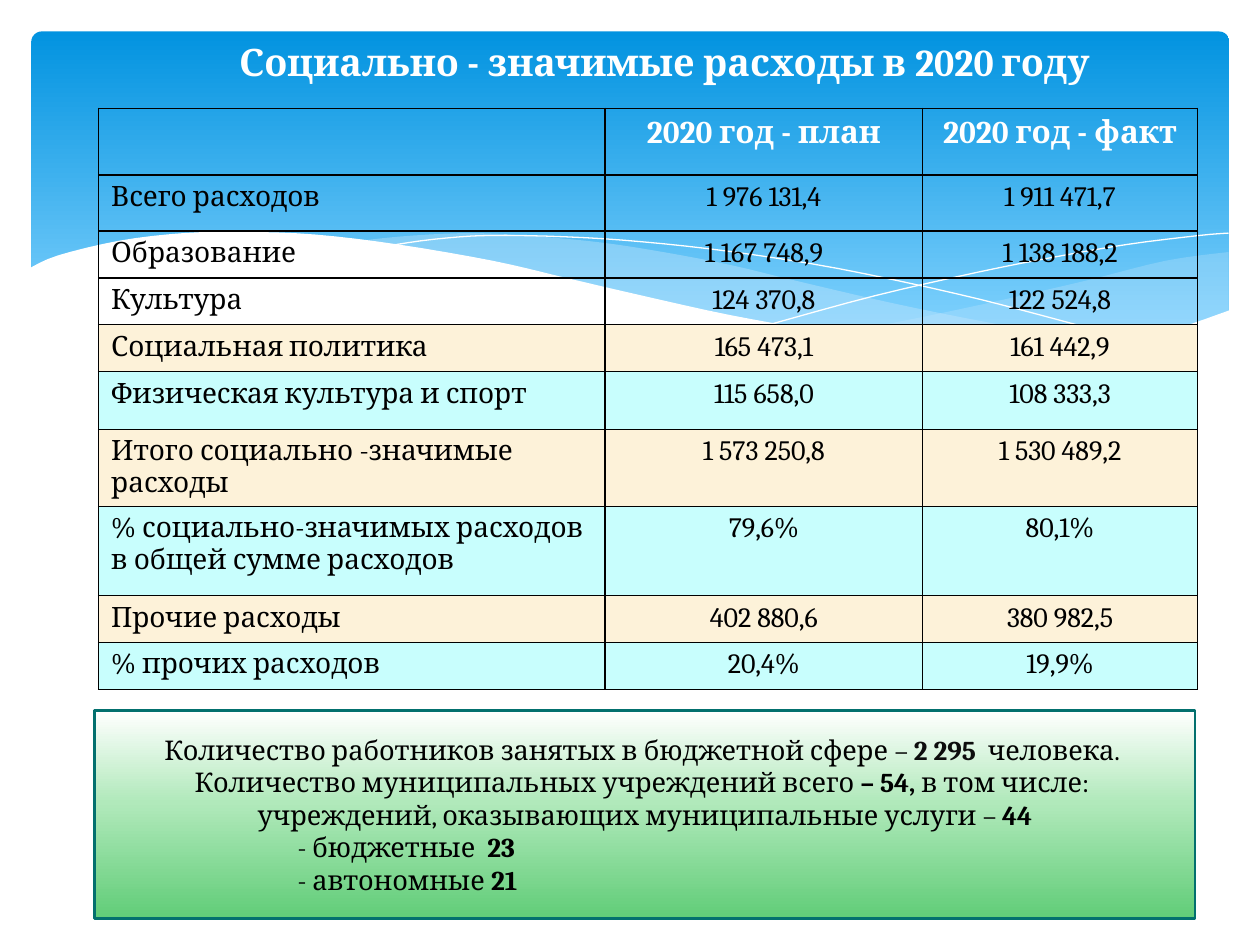
from copy import deepcopy
from pptx import Presentation
from pptx.dml.color import RGBColor
from pptx.enum.shapes import MSO_SHAPE
from pptx.enum.text import MSO_ANCHOR, MSO_AUTO_SIZE, PP_ALIGN
from pptx.oxml import parse_xml
from pptx.oxml.ns import nsdecls, qn
from pptx.util import Pt

FONT = "Cambria"
WHITE, BLACK, CREAM, AQUA = "FFFFFF", "000000", "FDF2D9", "C8FEFD"

# Knots of the wave curves, in points
BACK = [[(702, 144), (666, 149), (620, 160.5), (561, 174), (508, 185), (476, 191)],
        [(476, 191), (518, 195), (562, 199.4), (600, 199.7), (634, 197.3),
         (663, 191.5), (702, 178)]]
FRONT = [[(643, 196.5), (602, 190.8), (558, 183), (508, 172.8), (453, 160),
          (420, 152), (390, 146), (352, 139.7), (318, 136), (274, 133.2),
          (236, 134.6), (206, 137.5)],
         [(206, 137.5), (246, 143), (291, 152), (323, 160), (382, 173),
          (433, 183.6), (479, 191.5), (520, 197), (556, 199.4), (589, 200),
          (624, 198.7), (643, 196.5)]]
FALL = [(222.5, 140.4), (247.7, 136.8), (279, 134.6), (324, 135.4), (367, 138.2),
        (419, 144), (479, 153.5), (547, 168), (598, 181), (653, 196)]
RISE = [(441.4, 185), (500, 169), (559, 155.5), (602, 147), (644, 139.7),
        (685, 134.6), (702, 133.2)]
EDGE = [(16.6, 153.4), (33, 146), (68.4, 137.5), (105, 133.2), (139, 132.5),
        (180, 134), (227.5, 139.7), (281.5, 149), (321.8, 158.4), (362, 167.8),
        (417, 180), (466.6, 188.6), (522.7, 195.8), (571, 198.7), (602.6, 198.7),
        (638.6, 195), (669.6, 188.6), (703.4, 177)]

COLS = [289.5, 181.5, 157]
# Row height, fill, cells
ROWS = [
    (38, None, ["", "2020 год - план", "2020 год - факт"]),
    (32, None, ["Всего расходов", "1 976 131,4", "1 911 471,7"]),
    (26.8, None, ["Образование", "1 167 748,9", "1 138 188,2"]),
    (26.8, None, ["Культура", "124 370,8", "122 524,8"]),
    (26.8, CREAM, ["Социальная политика", "165 473,1", "161 442,9"]),
    (33, AQUA, ["Физическая культура и спорт", "115 658,0", "108 333,3"]),
    (44, CREAM, ["Итого социально -значимые расходы", "1 573 250,8", "1 530 489,2"]),
    (51, AQUA, ["% социально-значимых расходов в общей сумме расходов",
                "79,6%", "80,1%"]),
    (26.8, CREAM, ["Прочие расходы", "402 880,6", "380 982,5"]),
    (26.8, AQUA, ["% прочих расходов", "20,4%", "19,9%"]),
]
# Indent, then runs; every second run is bold
NOTES = [
    (0, ["Количество работников занятых в бюджетной сфере – ", "2 295  ", "человека. "]),
    (0, ["Количество муниципальных учреждений всего ", "– 54, ", "в том числе: "]),
    (0, ["учреждений, оказывающих муниципальные услуги – ", "44"]),
    (109, ["- бюджетные  ", "23"]),
    (109, ["- автономные ", "21"]),
]


def rgb(code):
    return RGBColor.from_string(code)


def add_run(para, text, size, color=BLACK, bold=False):
    run = para.add_run()
    run.text = text
    font = run.font
    font.name, font.size, font.bold = FONT, Pt(size), bold
    font.color.rgb = rgb(color)


def smooth(knots, steps=4):
    """Catmull-Rom points through the knots."""
    ext = [knots[0], *knots, knots[-1]]
    pts = [knots[0]]
    for a, b, c, d in zip(ext, ext[1:], ext[2:], ext[3:]):
        for n in range(1, steps + 1):
            t = n / steps
            pts.append(tuple(
                (2 * q + (r - p) * t + (2 * p - 5 * q + 4 * r - s) * t ** 2
                 + (3 * q - p - 3 * r + s) * t ** 3) / 2
                for p, q, r, s in zip(a, b, c, d)))
    return pts


def add_path(slide, pts, fill=None, alpha=None):
    """A closed filled area, or an open white hairline without fill."""
    spots = [(Pt(x), Pt(y)) for x, y in pts]
    pen = slide.shapes.build_freeform(*spots[0], scale=1.0)
    pen.add_line_segments(spots[1:], close=fill is not None)
    shape = pen.convert_to_shape()
    shape.shadow.inherit = False
    if fill is None:
        shape.fill.background()
        shape.line.width = Pt(0)
        shape.line.color.rgb = rgb(WHITE)
        return
    shape.line.fill.background()
    shape.fill.solid()
    shape.fill.fore_color.rgb = rgb(fill)
    if alpha:
        tone = shape.fill._xPr.find(".//" + qn("a:srgbClr"))
        tone.append(parse_xml(f'<a:alpha {nsdecls("a")} val="{alpha * 1000}"/>'))


def add_panel(slide, kind, box, stops):
    """A shape with a gradient running downwards."""
    shape = slide.shapes.add_shape(kind, *map(Pt, box))
    shape.shadow.inherit = False
    shape.fill.gradient()
    shape.fill.gradient_angle = 270
    group = shape._element.spPr.find(".//" + qn("a:gsLst"))
    for _ in stops[2:]:
        group.append(deepcopy(group[-1]))
    for stop, (pos, color) in zip(shape.fill.gradient_stops, stops):
        stop.position = pos
        stop.color.rgb = rgb(color)
    return shape


def add_waves(slide):
    for parts, alpha in ((BACK, 29), (FRONT, 40)):
        add_path(slide, smooth(parts[0]) + smooth(parts[1])[1:], "C6E7FC", alpha)
    for knots in (FALL, RISE):
        add_path(slide, smooth(knots))
    add_path(slide, smooth(EDGE) + [(703.4, 237), (16.6, 237)], WHITE)


def set_border(cell):
    props = cell._tc.get_or_add_tcPr()
    for n, side in enumerate(("lnL", "lnR", "lnT", "lnB")):
        props.insert(n, parse_xml(
            f'<a:{side} {nsdecls("a")} w="{Pt(1)}"><a:solidFill>'
            f'<a:srgbClr val="{BLACK}"/></a:solidFill></a:{side}>'))


def add_grid(slide):
    high = sum(row[0] for row in ROWS)
    table = slide.shapes.add_table(len(ROWS), len(COLS), Pt(56.3), Pt(62),
                                   Pt(sum(COLS)), Pt(high)).table
    table.first_row = table.horz_banding = False
    for col, wide in zip(table.columns, COLS):
        col.width = Pt(wide)
    for i, (tall, fill, texts) in enumerate(ROWS):
        table.rows[i].height = Pt(tall)
        for j, text in enumerate(texts):
            cell = table.cell(i, j)
            if fill:
                cell.fill.solid()
                cell.fill.fore_color.rgb = rgb(fill)
            else:
                cell.fill.background()
            set_border(cell)
            para = cell.text_frame.paragraphs[0]
            para.alignment = PP_ALIGN.CENTER if j else PP_ALIGN.LEFT
            if text:
                style = (16, BLACK, False) if i else (18, WHITE, True)
                add_run(para, text, *style)


def set_title(slide):
    title = slide.shapes.title
    title.left, title.top, title.width, title.height = map(Pt, (65.5, 15, 628.5, 40))
    frame = title.text_frame
    frame.word_wrap = True
    frame.auto_size = MSO_AUTO_SIZE.NONE
    frame.vertical_anchor = MSO_ANCHOR.MIDDLE
    para = frame.paragraphs[0]
    para.alignment = PP_ALIGN.CENTER
    add_run(para, "Социально - значимые расходы в 2020 году", 21.6, WHITE, True)
    # Bring the title in front of the banner
    slide.shapes._spTree.append(title._element)


def add_notes(slide):
    box = add_panel(slide, MSO_SHAPE.RECTANGLE, (54, 406, 629, 119),
                    [(0, WHITE), (0.44, "B1E9BB"), (1, "61CD78")])
    box.line.color.rgb = rgb("03706E")
    box.line.width = Pt(1.5)
    frame = box.text_frame
    frame.word_wrap = True
    frame.vertical_anchor = MSO_ANCHOR.MIDDLE
    for n, (indent, runs) in enumerate(NOTES):
        para = frame.add_paragraph() if n else frame.paragraphs[0]
        para.alignment = PP_ALIGN.LEFT if indent else PP_ALIGN.CENTER
        if indent:
            para._p.get_or_add_pPr().set("marL", str(Pt(indent)))
        for k, text in enumerate(runs):
            add_run(para, text, 15.5, "0D0D0D" if (n, k) == (0, 1) else BLACK, k % 2 == 1)


def main():
    deck = Presentation()
    deck.slide_width, deck.slide_height = Pt(720), Pt(540)
    slide = deck.slides.add_slide(deck.slide_layouts[5])
    # Blue banner with waves
    banner = add_panel(slide, MSO_SHAPE.ROUNDED_RECTANGLE, (18, 18, 684.5, 194.5),
                       [(0, "0293E0"), (0.9, "83D3FE")])
    banner.adjustments[0] = 0.03
    banner.line.fill.background()
    add_waves(slide)
    # Content
    add_grid(slide)
    set_title(slide)
    add_notes(slide)
    deck.save("out.pptx")


if __name__ == "__main__":
    main()
